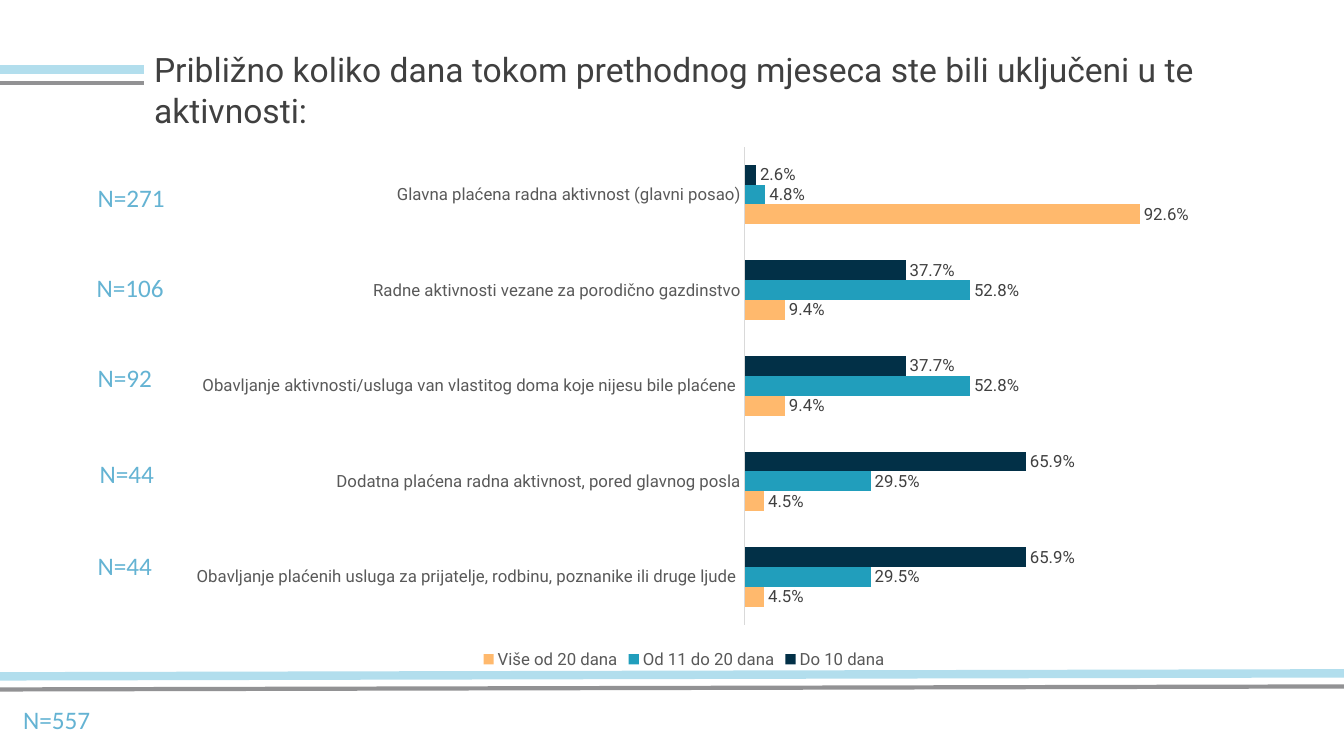
from lxml import etree
from pptx import Presentation
from pptx.chart.data import CategoryChartData
from pptx.dml.color import RGBColor
from pptx.enum.chart import (XL_CHART_TYPE as ChartType, XL_LABEL_POSITION as LabelPos,
                             XL_LEGEND_POSITION as LegendPos, XL_TICK_MARK as TickMark)
from pptx.enum.shapes import MSO_CONNECTOR
from pptx.enum.text import MSO_AUTO_SIZE
from pptx.oxml.ns import qn
from pptx.util import Inches, Pt

COLORS = {"title": "404040", "sample": "64B3D3", "axis_text": "595959", "axis": "D9D9D9",
          "black": "000000", "gray": "929294", "sky": "B2DEED",
          "navy": "023047", "teal": "219EBC", "orange": "FFB96D"}
TITLE = "Približno koliko dana tokom prethodnog mjeseca ste bili uključeni u te aktivnosti:"
SAMPLES = [("N=557", 0.13, 6.94), ("N=271", 0.87, 1.76), ("N=106", 0.86, 2.65),
           ("N=92", 0.87, 3.55), ("N=44", 0.89, 4.5), ("N=44", 0.87, 5.41)]
RULES = [(6.84, 6.81, 13.33, "gray", 3), (6.71, 6.68, 13.33, "sky", 6),
         (0.82, 0.82, 1.43, "gray", 3), (0.69, 0.69, 1.43, "sky", 6)]
ACTIVITIES = ["Glavna plaćena radna aktivnost (glavni posao)",
              "Radne aktivnosti vezane za porodično gazdinstvo",
              "Obavljanje aktivnosti/usluga van vlastitog doma koje nijesu bile plaćene ",
              "Dodatna plaćena radna aktivnost, pored glavnog posla",
              "Obavljanje plaćenih usluga za prijatelje, rodbinu, poznanike ili druge ljude "]
DAYS = [("Do 10 dana", "navy", (0.026, 0.377, 0.377, 0.659, 0.659)),
        ("Od 11 do 20 dana", "teal", (0.048, 0.528, 0.528, 0.295, 0.295)),
        ("Više od 20 dana", "orange", (0.926, 0.094, 0.094, 0.045, 0.045))]
PLOT_AREA = {"x": 0.56, "y": 0.02, "w": 0.42, "h": 0.89}


def rgb(color):
    return RGBColor.from_string(COLORS[color])


def style(font, color, size=12, face="Roboto"):
    font.name, font.size = face, Pt(size)
    font.color.rgb = rgb(color)


def add_text(slide, text, left, top, width=1.05, height=0.4, **look):
    box = slide.shapes.add_textbox(Inches(left), Inches(top), Inches(width), Inches(height))
    frame = box.text_frame
    frame.word_wrap = True
    frame.auto_size = MSO_AUTO_SIZE.SHAPE_TO_FIT_TEXT
    run = frame.paragraphs[0].add_run()
    run.text = text
    style(run.font, **look)


def add_rule(slide, start, end, length, color, weight):
    rule = slide.shapes.add_connector(MSO_CONNECTOR.STRAIGHT, 0, Inches(start),
                                      Inches(length), Inches(end))
    rule.line.color.rgb = rgb(color)
    rule.line.width = Pt(weight)
    etree.SubElement(rule._element.spPr, qn("a:effectLst"))


def place_plot(chart):
    plot_area = chart._chartSpace.chart.plotArea
    for old in plot_area.findall(qn("c:layout")):
        plot_area.remove(old)
    layout = etree.Element(qn("c:layout"))
    manual = etree.SubElement(layout, qn("c:manualLayout"))
    settings = [("layoutTarget", "inner"), ("xMode", "edge"), ("yMode", "edge")]
    for tag, value in settings + list(PLOT_AREA.items()):
        etree.SubElement(manual, qn(f"c:{tag}")).set("val", str(value))
    plot_area.insert(0, layout)


def add_days_chart(slide):
    data = CategoryChartData(number_format="0.0%")
    data.categories = ACTIVITIES
    for name, _, shares in DAYS:
        data.add_series(name, shares)
    chart = slide.shapes.add_chart(ChartType.BAR_CLUSTERED, Inches(1.75), Inches(1.35),
                                   Inches(10.07), Inches(5.33), data).chart
    style(chart.font, "black")
    chart.has_title = False
    chart.has_legend = True
    chart.legend.position = LegendPos.BOTTOM
    chart.legend.include_in_layout = False
    style(chart.legend.font, "axis_text")

    activities = chart.category_axis
    activities.reverse_order = True
    activities.major_tick_mark = activities.minor_tick_mark = TickMark.NONE
    activities.format.line.color.rgb = rgb("axis")
    activities.format.line.width = Pt(0.75)
    style(activities.tick_labels.font, "axis_text")
    shares_axis = chart.value_axis
    shares_axis.visible = False
    shares_axis.has_major_gridlines = False
    shares_axis.minimum_scale, shares_axis.maximum_scale = 0, 1

    plot = chart.plots[0]
    plot.gap_width, plot.overlap = 182, 0
    plot.vary_by_categories = False
    for series, (_, color, _) in zip(plot.series, DAYS):
        series.format.fill.solid()
        series.format.fill.fore_color.rgb = rgb(color)
        series.invert_if_negative = False
        labels = series.data_labels
        labels.show_value = True
        labels.position = LabelPos.OUTSIDE_END
        labels.number_format, labels.number_format_is_linked = "0.0%", False
        style(labels.font, "title")
    place_plot(chart)


def main():
    """Build the slide on days spent in each activity."""
    prs = Presentation()
    prs.slide_width, prs.slide_height = Inches(13.33), Inches(7.5)
    slide = prs.slides.add_slide(prs.slide_layouts[6])
    add_text(slide, TITLE, 1.43, 0.44, 10.7, 0.91, color="title", size=24)
    for rule in RULES:
        add_rule(slide, *rule)
    add_days_chart(slide)
    for sample, left, top in SAMPLES:
        add_text(slide, sample, left, top, color="sample", size=18, face="Calibri")
    prs.save("out.pptx")


if __name__ == "__main__":
    main()
